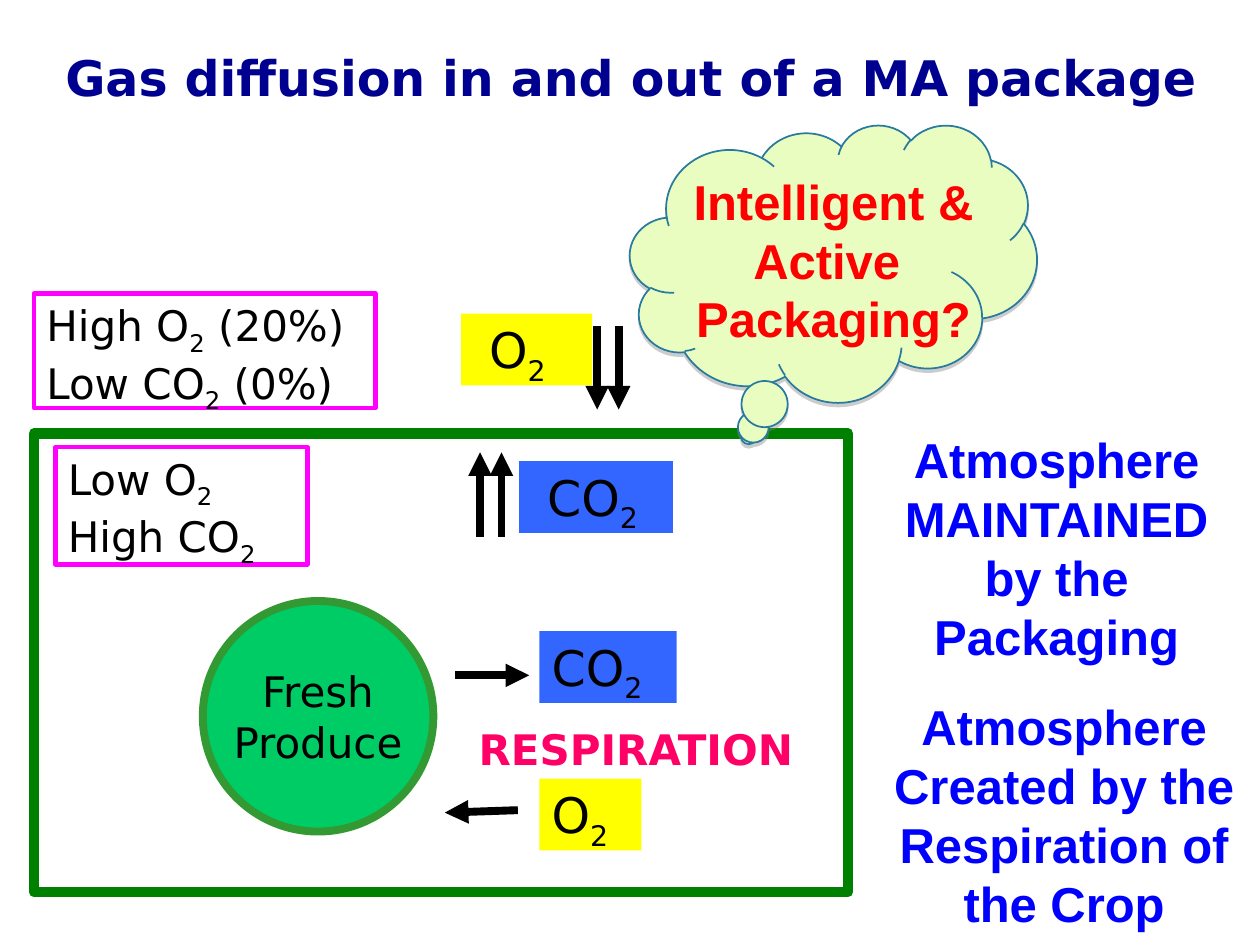
from lxml.etree import SubElement
from pptx import Presentation
from pptx.dml.color import RGBColor
from pptx.enum.shapes import MSO_CONNECTOR, MSO_SHAPE
from pptx.enum.text import MSO_ANCHOR, MSO_AUTO_SIZE, PP_ALIGN
from pptx.oxml.ns import qn
from pptx.util import Inches, Pt

SANS, ARIAL = "DejaVu Sans", "Arial"
BLACK, YELLOW, BLUE, MAGENTA = "000000", "FFFF00", "3366FF", "FF00FF"


def color(hex_string):
    return RGBColor.from_string(hex_string)


def write(shape, lines, size, font=SANS, ink=BLACK, bold=False,
          align=PP_ALIGN.LEFT, wrap=False, grow=True, anchor=MSO_ANCHOR.TOP):
    """Fill a shape with lines; "_" stands before each subscript digit."""
    frame = shape.text_frame
    frame.word_wrap = wrap
    frame.auto_size = MSO_AUTO_SIZE.SHAPE_TO_FIT_TEXT if grow else MSO_AUTO_SIZE.NONE
    frame.vertical_anchor = anchor
    for index, line in enumerate(lines):
        paragraph = frame.add_paragraph() if index else frame.paragraphs[0]
        paragraph.alignment = align
        paragraph.font.size = Pt(size)
        paragraph.font.name = font
        paragraph.font.bold = bold
        paragraph.font.color.rgb = color(ink)
        base, *subscripts = line.split("_")
        paragraph.add_run().text = base
        for part in subscripts:
            digit = paragraph.add_run()
            digit.text = part[0]
            digit.font._element.set("baseline", "-25000")
            if part[1:]:
                paragraph.add_run().text = part[1:]


def add_text(slide, box, lines, size, **style):
    text = slide.shapes.add_textbox(*map(Inches, box))
    write(text, lines, size, **style)


def add_block(slide, kind, box, fill=None, line=None, width=1):
    block = slide.shapes.add_shape(kind, *map(Inches, box))
    block.shadow.inherit = False
    if fill:
        block.fill.solid()
        block.fill.fore_color.rgb = color(fill)
    else:
        block.fill.background()
    if line:
        block.line.color.rgb = color(line)
        block.line.width = Pt(width)
    else:
        block.line.fill.background()
    return block


def add_arrow(slide, start, end):
    arrow = slide.shapes.add_connector(
        MSO_CONNECTOR.STRAIGHT, *map(Inches, (*start, *end)))
    arrow.line.color.rgb = color(BLACK)
    arrow.line.width = Pt(4.5)
    SubElement(arrow.line._get_or_add_ln(), qn("a:tailEnd"), type="triangle")
    SubElement(arrow._element.spPr, qn("a:effectLst"))


def add_air_label(slide, box, lines, wrap=False):
    label = add_block(slide, MSO_SHAPE.RECTANGLE, box, line=MAGENTA, width=2.5)
    write(label, lines, 24, wrap=wrap)


def add_gas(slide, box, name, fill):
    gas = add_block(slide, MSO_SHAPE.RECTANGLE, box, fill=fill)
    write(gas, [name], 28)


def add_package(slide, box):
    left, top, width, height = box
    # Air outside and inside the package wall
    add_air_label(slide, (left, top - 1.11, 2.71, 0.91),
                  ["High O_2 (20%)", "Low CO_2 (0%)"])
    add_block(slide, MSO_SHAPE.RECTANGLE, box, line="008000", width=6)
    add_air_label(slide, (left + 0.17, top + 0.11, 2, 0.93),
                  ["Low O_2", "High CO_2"], wrap=True)

    # Produce and its respiration
    produce = add_block(slide, MSO_SHAPE.OVAL, (left + 1.34, top + 1.33, 1.83, 1.83),
                        fill="00CC66", line="339933", width=4.5)
    write(produce, ["Fresh", "Produce"], 24, align=PP_ALIGN.CENTER,
          grow=False, anchor=MSO_ANCHOR.MIDDLE)
    add_text(slide, (left + 3.43, top + 2.25, 2.85, 0.5), ["RESPIRATION"], 24,
             ink="FF0066", bold=True)

    # Gases
    for dx, dy, gas_width, name, fill in [
        (3.85, 0.22, 1.22, " CO_2", BLUE),
        (4.01, 1.57, 1.09, "CO_2", BLUE),
        (3.39, -0.95, 1.04, " O_2", YELLOW),
        (4.01, 2.74, 0.81, "O_2", YELLOW),
    ]:
        add_gas(slide, (left + dx, top + dy, gas_width, 0.57), name, fill)

    # Diffusion arrows in pairs, then respiration arrows
    for x, start, end in [(4.47, -0.85, -0.19), (3.54, 0.82, 0.15)]:
        for shift in (0.17, 0):
            add_arrow(slide, (left + x + shift, top + start),
                      (left + x + shift, top + end))
    add_arrow(slide, (left + 3.34, top + 1.92), (left + 3.93, top + 1.92))
    add_arrow(slide, (left + 3.84, top + 2.99), (left + 3.26, top + 3.01))


def add_thought(slide, box):
    left, top, _, _ = box
    cloud = add_block(slide, MSO_SHAPE.CLOUD_CALLOUT, box,
                      fill="EAFDC1", line="287A9E", width=1)
    cloud.adjustments[0], cloud.adjustments[1] = -0.208, 0.625
    effects = cloud._element.spPr.find(qn("a:effectLst"))
    shadow = SubElement(effects, qn("a:outerShdw"), blurRad="0",
                        dist=str(Pt(2)), dir="5400000", rotWithShape="0")
    tint = SubElement(shadow, qn("a:srgbClr"), val="808080")
    SubElement(tint, qn("a:alpha"), val="40000")
    add_text(slide, (left + 0.39, top + 0.32, 2.45, 1.51),
             ["Intelligent & ", "Active ", "Packaging?"], 28, font=ARIAL,
             ink="FF0000", bold=True, align=PP_ALIGN.CENTER)


def add_remark(slide, box, remark):
    add_text(slide, box, [remark], 28, font=ARIAL, ink="0000FF", bold=True,
             align=PP_ALIGN.CENTER, wrap=True)


def main():
    deck = Presentation()
    deck.slide_width, deck.slide_height = Inches(10), Inches(7.5)
    slide = deck.slides.add_slide(deck.slide_layouts[6])
    add_text(slide, (0.42, 0.33, 9.19, 0.57),
             ["Gas diffusion in and out of a MA package"], 28,
             ink="000090", bold=True)
    add_package(slide, (0.27, 3.44, 6.46, 3.64))
    add_thought(slide, (5, 0.99, 3.23, 2.2))
    add_remark(slide, (6.89, 5.48, 3.11, 1.99),
               "Atmosphere Created by the Respiration of the Crop")
    add_remark(slide, (6.89, 3.36, 2.99, 1.99),
               "Atmosphere MAINTAINED by the Packaging")
    deck.save("out.pptx")


if __name__ == "__main__":
    main()
